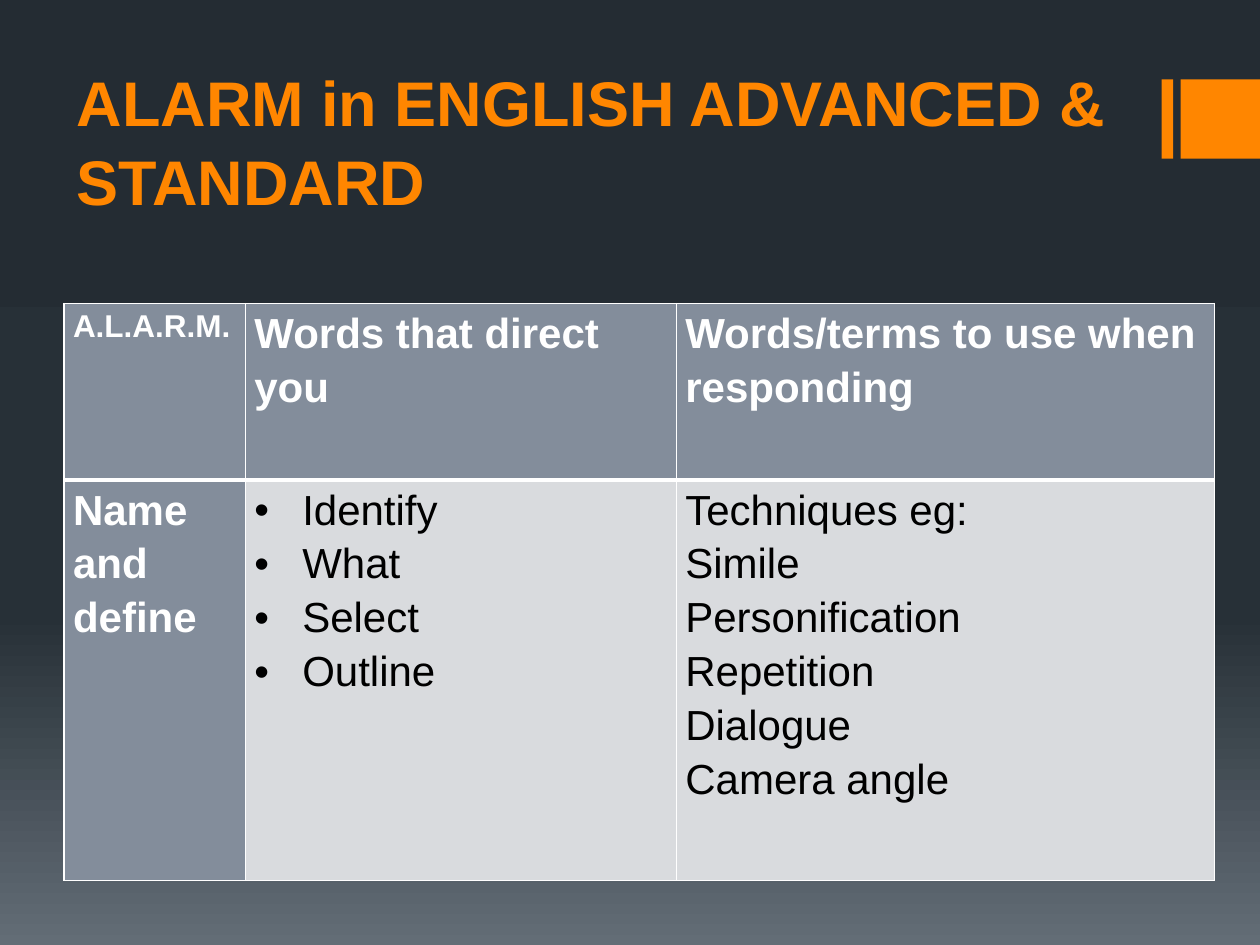
import copy

import pptx
import pptx.dml.color
import pptx.enum.shapes
import pptx.enum.text
import pptx.oxml.ns
import pptx.util
from lxml import etree

Inches, Pt = pptx.util.Inches, pptx.util.Pt
RGBColor = pptx.dml.color.RGBColor
qn = pptx.oxml.ns.qn

ORANGE = RGBColor(0xFF, 0x86, 0x00)
WHITE = RGBColor(0xFF, 0xFF, 0xFF)
BLACK = RGBColor(0x00, 0x00, 0x00)
SLATE = RGBColor(0x83, 0x8D, 0x9B)
PALE = RGBColor(0xD9, 0xDB, 0xDE)
FONT = "Arial"

# Content
TITLE = "ALARM in ENGLISH ADVANCED & STANDARD"
ROWS = [
    [["A.L.A.R.M."], ["Words that direct you"],
     ["Words/terms to use when responding"]],
    [["Name and define"],
     ["Identify", "What", "Select", "Outline"],
     ["Techniques eg:", "Simile", "Personification", "Repetition",
      "Dialogue", "Camera angle"]],
]
BULLETED = (1, 1)
SMALL = (0, 0)
COL_WIDTHS = [1.44, 3.42, 4.27]
ROW_HEIGHTS = [1.4, 3.18]
BACKGROUND = [(0, RGBColor(0x24, 0x2C, 0x33)),
              (0.65, RGBColor(0x27, 0x30, 0x37)),
              (1, RGBColor(0x63, 0x6D, 0x76))]
ACCENTS = [(9.22, 0.09), (9.37, 0.63)]  # left, width


def style_paragraph(p, size, color, bold, spacing):
    p.line_spacing = spacing
    for r in p.runs:
        r.font.name, r.font.size, r.font.bold = FONT, Pt(size), bold
        r.font.color.rgb = color


def add_bullet(p):
    pPr = p._p.get_or_add_pPr()
    pPr.set("marL", str(Inches(0.38)))
    pPr.set("indent", str(-Inches(0.38)))
    etree.SubElement(pPr, qn("a:buFont")).set("typeface", FONT)
    etree.SubElement(pPr, qn("a:buChar")).set("char", "•")


def set_borders(cell, widths):
    """Draw white borders; widths are left, right, top, bottom in points."""
    tcPr = cell._tc.get_or_add_tcPr()
    for i, (side, width) in enumerate(zip("LRTB", widths)):
        ln = etree.Element(qn(f"a:ln{side}"), w=str(Pt(width)))
        fill = etree.SubElement(ln, qn("a:solidFill"))
        etree.SubElement(fill, qn("a:srgbClr")).set("val", str(WHITE))
        tcPr.insert(i, ln)


prs = pptx.Presentation()
prs.slide_width, prs.slide_height = Inches(10), Inches(7.5)
slide = prs.slides.add_slide(prs.slide_layouts[6])

# Background gradient, top to bottom
fill = slide.background.fill
fill.gradient()
fill.gradient_angle = 270
first = fill.gradient_stops[0]._gs
first.addnext(copy.deepcopy(first))
for stop, (position, color) in zip(fill.gradient_stops, BACKGROUND):
    stop.position = position
    stop.color.rgb = color

# Accent bars at the right edge
for left, width in ACCENTS:
    sp = slide.shapes.add_shape(pptx.enum.shapes.MSO_SHAPE.RECTANGLE,
                                Inches(left), Inches(0.63),
                                Inches(width), Inches(0.63))
    sp.shadow.inherit = False
    sp.fill.solid()
    sp.fill.fore_color.rgb = ORANGE
    sp.line.fill.background()

# Title
sp = slide.shapes.add_textbox(Inches(0.51), Inches(0.44),
                              Inches(8.99), Inches(1.34))
tf = sp.text_frame
tf.word_wrap = True
tf.vertical_anchor = pptx.enum.text.MSO_ANCHOR.BOTTOM
tf.text = TITLE
style_paragraph(tf.paragraphs[0], 36, ORANGE, True, 1.05)

# Table
table = slide.shapes.add_table(
    len(ROWS), len(COL_WIDTHS), Inches(0.51), Inches(2.41),
    Inches(sum(COL_WIDTHS)), Inches(sum(ROW_HEIGHTS))).table
for column, width in zip(table.columns, COL_WIDTHS):
    column.width = Inches(width)
for row, height in zip(table.rows, ROW_HEIGHTS):
    row.height = Inches(height)

for i, row in enumerate(ROWS):
    for j, lines in enumerate(row):
        cell = table.cell(i, j)
        heading = i == 0 or j == 0
        cell.margin_left = cell.margin_right = Inches(0.07)
        cell.margin_top = cell.margin_bottom = 0
        cell.fill.solid()
        cell.fill.fore_color.rgb = SLATE if heading else PALE
        set_borders(cell, (1, 1, 1, 3) if i == 0 else (1, 1, 3, 1))
        cell.text_frame.text = "\n".join(lines)
        for p in cell.text_frame.paragraphs:
            style_paragraph(p, 18 if (i, j) == SMALL else 24,
                            WHITE if heading else BLACK, heading, 1.15)
            if (i, j) == BULLETED:
                add_bullet(p)

prs.save("out.pptx")
